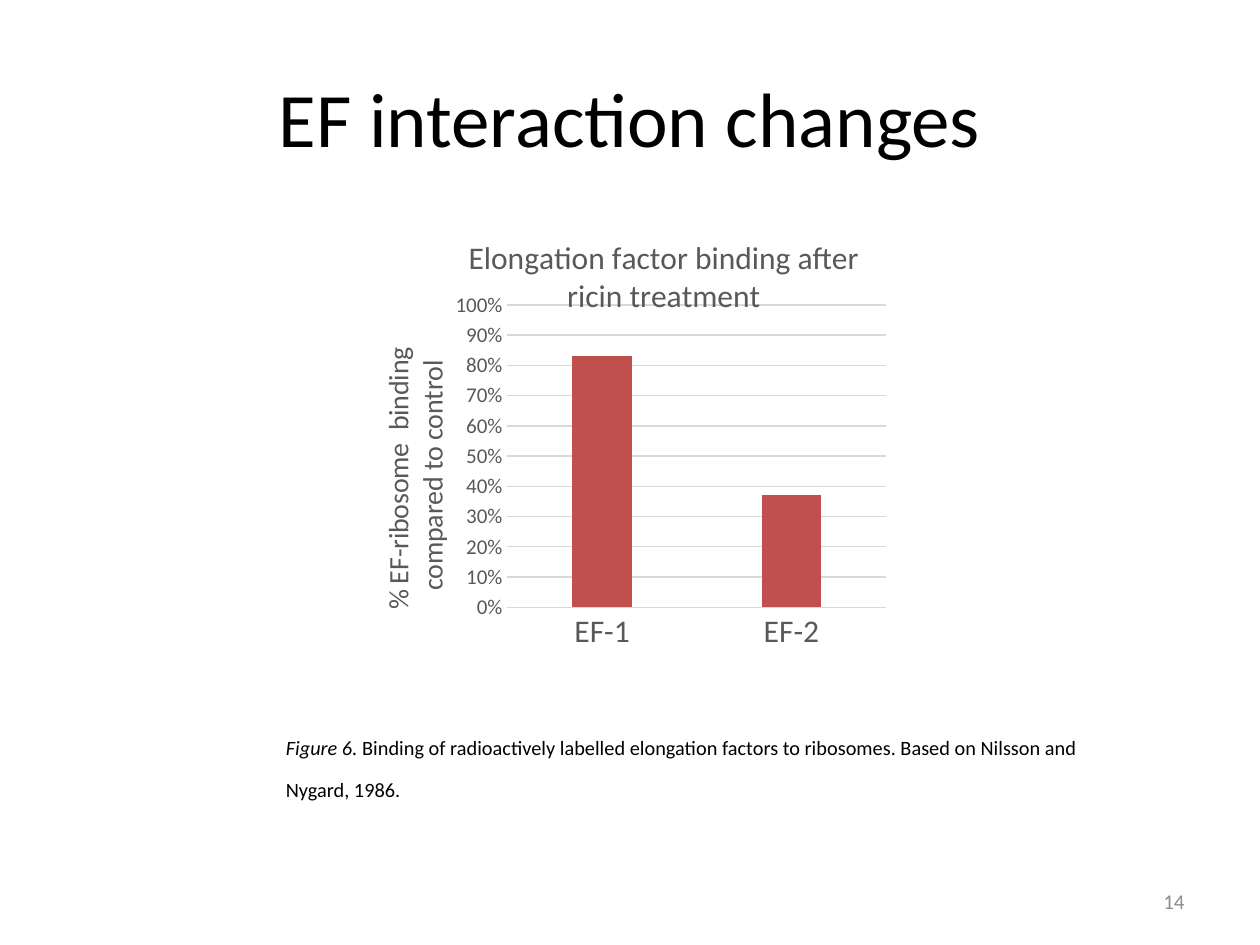
from lxml import etree
from pptx import Presentation
from pptx.chart.data import CategoryChartData
from pptx.dml.color import RGBColor
from pptx.enum.chart import XL_CHART_TYPE, XL_TICK_MARK
from pptx.enum.text import MSO_ANCHOR, PP_ALIGN
from pptx.oxml import parse_xml
from pptx.oxml.ns import nsdecls
from pptx.util import Inches, Pt

COLUMNS = XL_CHART_TYPE.COLUMN_CLUSTERED
NO_TICK = XL_TICK_MARK.NONE
MIDDLE = MSO_ANCHOR.MIDDLE
LEFT, CENTER, RIGHT = PP_ALIGN.LEFT, PP_ALIGN.CENTER, PP_ALIGN.RIGHT

# Content
TITLE = "EF interaction changes"
CHART_TITLE = "Elongation factor binding after ricin treatment"
VALUE_TITLE = "% EF-ribosome  binding  compared to control"
BINDING = {"EF-1": 0.83, "EF-2": 0.37}
CAPTION = [
    ("Figure 6. ", True),
    ("Binding of radioactively labelled elongation factors to ribosomes. "
     "Based on Nilsson and Nygard, 1986.", False),
]
PAGE_NUMBER = "14"

# Theme and places (left, top, width, height)
THEME = {
    "font": "Calibri",
    "text": "000000", "muted": "595959", "grid": "D9D9D9",
    "bar": "C0504D", "number": "8C8C8C",
    "title_size": 44, "caption_size": 20, "chart_title_size": 18,
    "category_size": 18, "value_title_size": 16, "small_size": 12,
}
TITLE_BOX = (0.5, 0.3, 9, 1.25)
CHART_BOX = (2.79, 1.75, 4.42, 3.53)
CAPTION_BOX = (2.17, 5.75, 6.58, 1.25)
NUMBER_BOX = (7.17, 6.95, 2.33, 0.4)

# Places inside the chart, as shares of its size
PLOT_AREA = {"x": 0.28, "y": 0.19, "w": 0.68, "h": 0.68}
CHART_TITLE_SPOT = {"x": 0.2, "y": 0.02}
VALUE_TITLE_SPOT = {"x": 0.04, "y": 0.26}


def style(font, size, color, italic=None):
    font.name = THEME["font"]
    font.size = Pt(THEME[size])
    font.color.rgb = RGBColor.from_string(THEME[color])
    font.bold = False
    font.italic = italic


def grid_line(line):
    line.color.rgb = RGBColor.from_string(THEME["grid"])
    line.width = Pt(0.75)


def place(part, shares, index, target=""):
    """Give a chart part a fixed layout, as child number index."""
    for old_layout in part.findall("{*}layout"):
        part.remove(old_layout)
    layout = parse_xml(
        f'<c:layout {nsdecls("c")}><c:manualLayout>{target}'
        '<c:xMode val="edge"/><c:yMode val="edge"/></c:manualLayout></c:layout>')
    for side, share in shares.items():
        tag = etree.QName(layout.nsmap["c"], side)
        etree.SubElement(layout[0], tag, val=str(share))
    part.insert(index, layout)


def chart_label(label, text, size, spot):
    label.text_frame.text = text
    style(label.text_frame.paragraphs[0].runs[0].font, size, "muted")
    place(label._element, spot, 1)


def add_text(box, runs, size, color, align=LEFT):
    frame = slide.shapes.add_textbox(*map(Inches, box)).text_frame
    frame.word_wrap = True
    paragraph = frame.paragraphs[0]
    paragraph.alignment = align
    for text, italic in runs:
        run = paragraph.add_run()
        run.text = text
        style(run.font, size, color, italic)
    return frame


prs = Presentation()
prs.slide_width, prs.slide_height = Inches(10), Inches(7.5)
slide = prs.slides.add_slide(prs.slide_layouts[5])

# Title
title = slide.shapes.title
title.left, title.top, title.width, title.height = map(Inches, TITLE_BOX)
title.text_frame.text = TITLE
title.text_frame.vertical_anchor = MIDDLE
title.text_frame.paragraphs[0].alignment = CENTER
style(title.text_frame.paragraphs[0].runs[0].font, "title_size", "text")

# Column chart
data = CategoryChartData(number_format="0%")
data.categories = list(BINDING)
data.add_series("Series 1", list(BINDING.values()))
chart = slide.shapes.add_chart(COLUMNS, *map(Inches, CHART_BOX), data).chart
chart.has_legend = False
style(chart.font, "small_size", "muted")
chart.has_title = True
chart_label(chart.chart_title, CHART_TITLE, "chart_title_size", CHART_TITLE_SPOT)
place(chart._chartSpace.chart.plotArea, PLOT_AREA, 0,
      '<c:layoutTarget val="inner"/>')

plot = chart.plots[0]
plot.gap_width, plot.overlap = 219, -27
plot.vary_by_categories = False
bars = plot.series[0].format.fill
bars.solid()
bars.fore_color.rgb = RGBColor.from_string(THEME["bar"])

# Axes
categories, values = chart.category_axis, chart.value_axis
for axis, size in ((categories, "category_size"), (values, "small_size")):
    axis.major_tick_mark = axis.minor_tick_mark = NO_TICK
    style(axis.tick_labels.font, size, "muted")
grid_line(categories.format.line)
grid_line(values.major_gridlines.format.line)
values.format.line.fill.background()
values.minimum_scale, values.maximum_scale, values.major_unit = 0, 1, 0.1
values.tick_labels.number_format = "0%"
values.tick_labels.number_format_is_linked = False
value_title = values.axis_title
chart_label(value_title, VALUE_TITLE, "value_title_size", VALUE_TITLE_SPOT)
value_title_body = value_title.text_frame._txBody.bodyPr
value_title_body.set("rot", "-5400000")
value_title_body.set("vert", "horz")

# Caption in raised type
caption = add_text(CAPTION_BOX, CAPTION, "caption_size", "text")
for run in caption.paragraphs[0].runs:
    run._r.get_or_add_rPr().set("baseline", "30000")

# Page number
number = add_text(NUMBER_BOX, [(PAGE_NUMBER, None)], "small_size", "number", RIGHT)
number.vertical_anchor = MIDDLE

prs.save("out.pptx")
